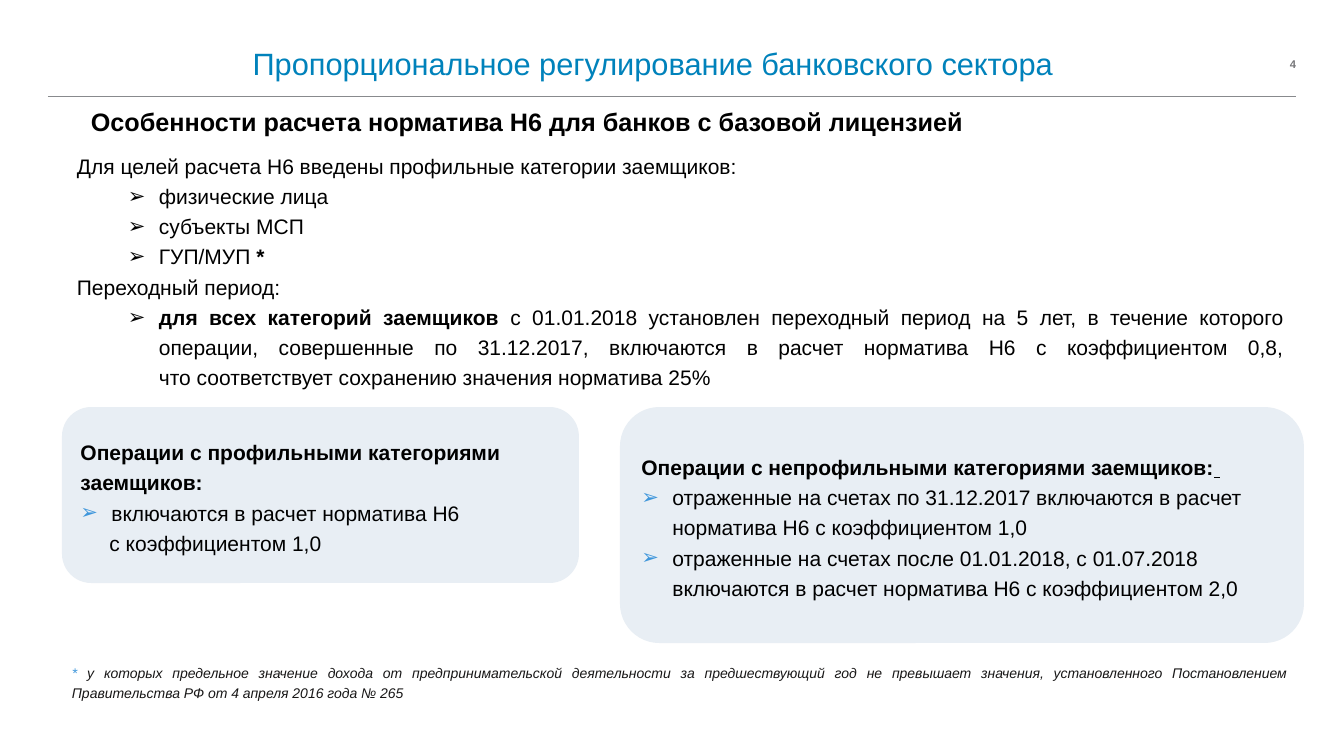
from lxml import etree
from pptx import Presentation, util as u
from pptx.dml.color import RGBColor
from pptx.enum import shapes, text
from pptx.oxml.ns import qn

PX = 12192000 / 1344
NBSP = chr(160)
ROUND = shapes.MSO_SHAPE.ROUNDED_RECTANGLE
RECT = shapes.MSO_SHAPE.RECTANGLE
MIDDLE, TOP = text.MSO_ANCHOR.MIDDLE, text.MSO_ANCHOR.TOP
JUSTIFY = text.PP_ALIGN.JUSTIFY


class Theme:
    font = "Arial"
    black, title, accent = "000000", "0082BB", "3E96DB"
    card, white, rule, number, note = "E8EEF4", "FFFFFF", "888A8D", "77777A", "181717"
    title_size, heading_size, body_size, note_size, number_size = 22, 18, 15, 10, 8
    spacing = 1.2


def px(n):
    return u.Emu(round(n * PX))


def add_bullet(p, color):
    pPr = p._p.get_or_add_pPr()
    clr = etree.SubElement(pPr, qn("a:buClr"))
    etree.SubElement(clr, qn("a:srgbClr")).set("val", color)
    etree.SubElement(pPr, qn("a:buFont")).set("typeface", Theme.font)
    etree.SubElement(pPr, qn("a:buChar")).set("char", "➢")


def para(*runs, left=0, hang=0, bullet=None, align=None):
    """A paragraph: runs are (text, format dict) pairs or plain strings."""
    return dict(runs=runs, left=left, hang=hang, bullet=bullet, align=align)


def write(sp, paras, size, color=Theme.black, spacing=None, anchor=TOP, **fmt):
    tf = sp.text_frame
    tf.word_wrap = True
    tf.vertical_anchor = anchor
    for i, item in enumerate(paras):
        p = tf.paragraphs[0] if i == 0 else tf.add_paragraph()
        p.alignment = item["align"] or text.PP_ALIGN.LEFT
        if spacing:
            p.line_spacing = spacing
        pPr = p._p.get_or_add_pPr()
        pPr.set("marL", str(px(item["left"])))
        pPr.set("indent", str(-px(item["hang"])))
        if item["bullet"]:
            add_bullet(p, item["bullet"])
        for run in item["runs"]:
            words, extra = (run, {}) if isinstance(run, str) else run
            look = {"name": Theme.font, "size": u.Pt(size), "color": color, **fmt, **extra}
            r = p.add_run()
            r.text = words
            r.font.color.rgb = RGBColor.from_string(look.pop("color"))
            for key, value in look.items():
                setattr(r.font, key, value)


def add_box(s, kind, box, fill=None):
    sp = s.shapes.add_shape(kind, *map(px, box))
    sp.shadow.inherit = False
    sp.line.fill.background()
    if fill:
        sp.fill.solid()
        sp.fill.fore_color.rgb = RGBColor.from_string(fill)
    else:
        sp.fill.background()
    return sp


def add_header(s, x, y, w, h):
    # Rule under the title
    line = s.shapes.add_connector(shapes.MSO_CONNECTOR.STRAIGHT,
                                  px(x), px(y + h), px(x + w), px(y + h))
    line.line.color.rgb = RGBColor.from_string(Theme.rule)
    line.line.width = u.Pt(0.5)
    etree.SubElement(line._element.spPr, qn("a:effectLst"))
    # Page number
    tb = s.shapes.add_textbox(px(x + w - 43), px(y), px(43), px(51))
    for side in ("left", "top", "right", "bottom"):
        setattr(tb.text_frame, f"margin_{side}", 0)
    write(tb, [para("4", align=text.PP_ALIGN.RIGHT)], Theme.number_size,
          Theme.number, anchor=MIDDLE, bold=True)
    # Title
    tb = s.shapes.add_textbox(px(x + 140), px(y + 2), px(930), px(44))
    write(tb, [para("Пропорциональное регулирование банковского сектора",
                    align=text.PP_ALIGN.CENTER)], Theme.title_size, Theme.title)


def add_heading(s, x, y, w, h):
    tb = s.shapes.add_textbox(px(x), px(y), px(w), px(h))
    write(tb, [para("Особенности расчета норматива Н6 для банков с базовой лицензией",
                    left=19)], Theme.heading_size, bold=True)


def add_body(s, *box):
    item = dict(left=82, hang=31, bullet=Theme.black)
    unbroken = NBSP.join(["что", "соответствует", "сохранению"])
    write(add_box(s, ROUND, box), [
        para("Для целей расчета Н6 введены профильные категории заемщиков:"),
        para("физические лица", **item),
        para("субъекты МСП", **item),
        para("ГУП/МУП ", ("*", {"bold": True}), **item),
        para("Переходный период:"),
        para(("для всех категорий заемщиков ", {"bold": True}),
             "с 01.01.2018 установлен переходный период на 5 лет, в течение которого "
             "операции, совершенные по 31.12.2017, включаются в расчет норматива Н6 "
             f"с коэффициентом 0,8, {unbroken} значения норматива 25%",
             align=JUSTIFY, **item),
    ], Theme.body_size, spacing=Theme.spacing, anchor=MIDDLE)


def add_card(s, box, heading, paras):
    write(add_box(s, ROUND, box, Theme.card), [para(*heading)] + paras,
          Theme.body_size, spacing=Theme.spacing, anchor=MIDDLE)


def add_cards(s, x, y):
    bold = {"bold": True}
    item = dict(left=31, hang=31, bullet=Theme.accent)
    # Core borrower categories
    add_card(s, (x, y, 517, 176),
             [("Операции с профильными категориями заемщиков:", bold)],
             [para("включаются в расчет норматива Н6", **item),
              para("с коэффициентом 1,0", left=29)])
    # Other borrower categories
    add_card(s, (x + 558, y, 684, 236),
             [("Операции с непрофильными категориями заемщиков:", bold),
              (" ", {"underline": True})],
             [para("отраженные на счетах по 31.12.2017 включаются в расчет "
                   "норматива Н6 с коэффициентом 1,0", **item),
              para("отраженные на счетах после 01.01.2018, с 01.07.2018 "
                   "включаются в расчет норматива Н6 с коэффициентом 2,0", **item)])


def add_footnote(s, *box):
    write(add_box(s, RECT, box, Theme.white), [
        para(("* ", {"color": Theme.accent}),
             "у которых предельное значение дохода от предпринимательской деятельности "
             "за предшествующий год не превышает значения, установленного Постановлением "
             "Правительства РФ от 4 апреля 2016 года № 265", align=JUSTIFY),
    ], Theme.note_size, Theme.note, spacing=Theme.spacing, italic=True)


def main():
    prs = Presentation()
    prs.slide_width, prs.slide_height = px(1344), px(756)
    s = prs.slides.add_slide(prs.slide_layouts[6])
    add_header(s, 48, 38, 1248, 58)
    add_footnote(s, 62, 656, 1234, 49)
    add_cards(s, 62, 407)
    add_body(s, 55, 146, 1251, 246)
    add_heading(s, 62, 101, 915, 40)
    prs.save("out.pptx")


if __name__ == "__main__":
    main()
